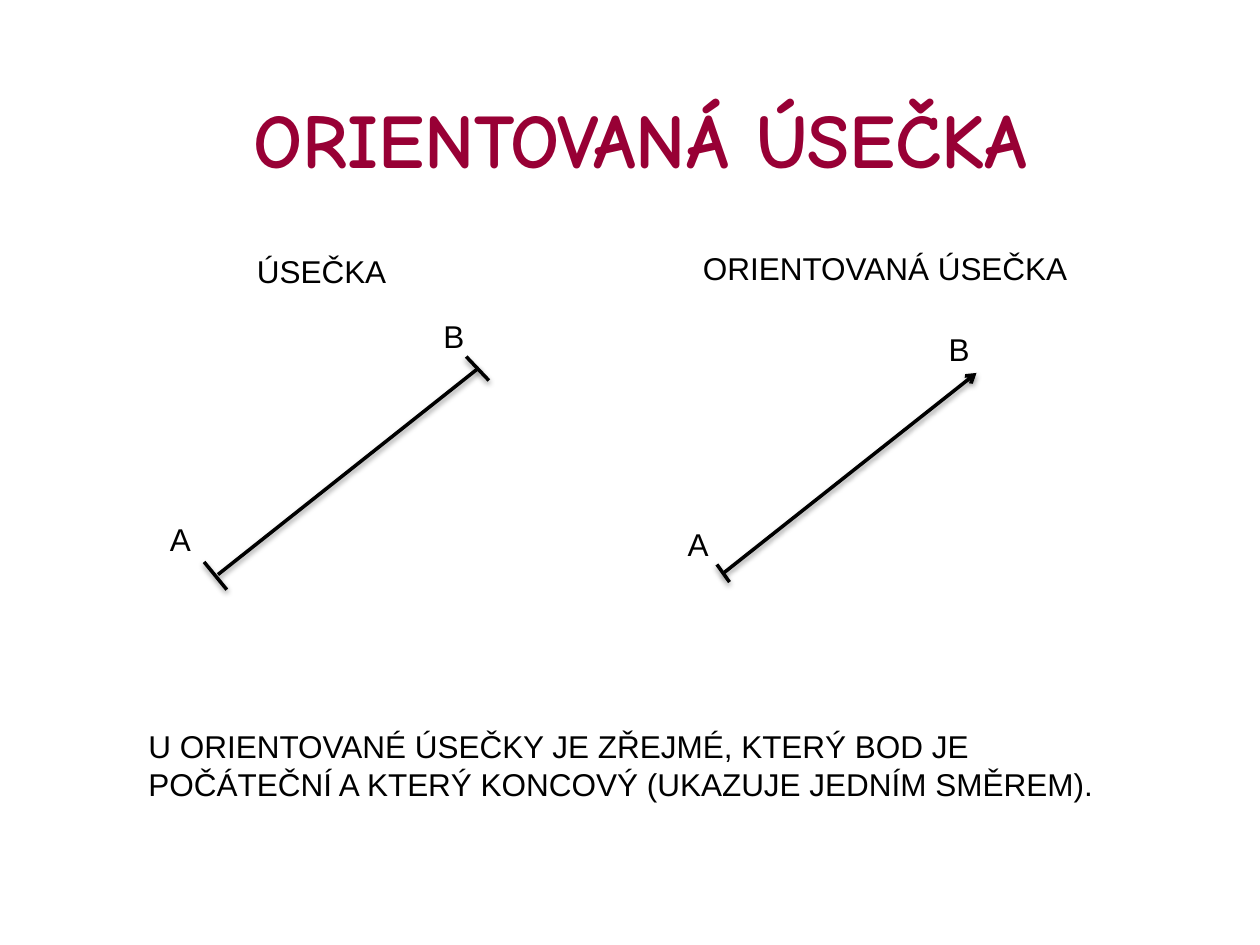
import pptx
import pptx.util
import pptx.dml.color
import pptx.enum.shapes
import pptx.enum.text
import pptx.oxml
import pptx.oxml.ns

Inches = pptx.util.Inches
RGBColor = pptx.dml.color.RGBColor
PP_ALIGN = pptx.enum.text.PP_ALIGN
MSO_ANCHOR = pptx.enum.text.MSO_ANCHOR

CRIMSON = RGBColor(0x98, 0x00, 0x35)
BLACK = RGBColor(0, 0, 0)

SHADOW = (
    f'<a:effectLst {pptx.oxml.ns.nsdecls("a")}>'
    '<a:outerShdw blurRad="40000" dist="20000" dir="5400000" rotWithShape="0">'
    '<a:srgbClr val="000000"><a:alpha val="38000"/></a:srgbClr>'
    '</a:outerShdw></a:effectLst>'
)
ARROW = f'<a:tailEnd {pptx.oxml.ns.nsdecls("a")} type="arrow"/>'


def write(tf, text, *, font="Arial", size=18, color=BLACK, bold=False,
          align=PP_ALIGN.LEFT, anchor=MSO_ANCHOR.TOP, wrap=False):
    """Fill a text frame, one paragraph for each line of text."""
    tf.word_wrap = wrap
    tf.vertical_anchor = anchor
    for i, line in enumerate(text.split("\n")):
        p = tf.paragraphs[0] if i == 0 else tf.add_paragraph()
        p.alignment = align
        r = p.add_run()
        r.text = line
        r.font.name = font
        r.font.size = pptx.util.Pt(size)
        r.font.bold = bold
        r.font.color.rgb = color


def add_text(shapes, text, left, top, width, height=0.4):
    s = shapes.add_textbox(Inches(left), Inches(top), Inches(width), Inches(height))
    write(s.text_frame, text)
    s.text_frame.auto_size = pptx.enum.text.MSO_AUTO_SIZE.SHAPE_TO_FIT_TEXT


def add_line(shapes, start, end, arrow=False):
    points = [Inches(v) for v in (*start, *end)]
    s = shapes.add_connector(pptx.enum.shapes.MSO_CONNECTOR.STRAIGHT, *points)
    s.line.color.rgb = BLACK
    s.line.width = pptx.util.Pt(2)
    if arrow:
        s.line._get_or_add_ln().append(pptx.oxml.parse_xml(ARROW))
    s._element.spPr.append(pptx.oxml.parse_xml(SHADOW))


def add_title(slide, left, top, width, height):
    s = slide.shapes.title
    s.left, s.top, s.width, s.height = map(Inches, (left, top, width, height))
    write(s.text_frame, "ORIENTOVANÁ ÚSEČKA", font="Comic Neue", size=44,
          color=CRIMSON, bold=True, align=PP_ALIGN.CENTER,
          anchor=MSO_ANCHOR.MIDDLE, wrap=True)
    s.text_frame.auto_size = pptx.enum.text.MSO_AUTO_SIZE.NONE


def add_segment(slide, left, top, width, height, *, ticks, labels, arrow=False):
    """Draw A (bottom left) to B (top right); offsets are from the box corner."""
    shapes = slide.shapes.add_group_shape().shapes
    add_line(shapes, (left, top + height), (left + width, top), arrow)
    for x1, y1, x2, y2 in ticks:
        add_line(shapes, (left + x1, top + y1), (left + x2, top + y2))
    for name, (x, y) in zip("AB", labels):
        add_text(shapes, name, left + x, top + y, 0.37)


def main():
    prs = pptx.Presentation()
    prs.slide_width, prs.slide_height = Inches(10), Inches(7.5)
    slide = prs.slides.add_slide(prs.slide_layouts.get_by_name("Title Only"))

    add_title(slide, 0.75, 0.47, 8.67, 1.25)

    # Column headings
    add_text(slide.shapes, "ÚSEČKA", 1.94, 1.95, 1.24)
    add_text(slide.shapes, "ORIENTOVANÁ ÚSEČKA", 5.48, 1.93, 3.12)

    # Plain segment, with a tick at each end
    add_segment(slide, 1.73, 2.92, 2.07, 1.64,
                ticks=[(-0.11, 1.54, 0.07, 1.76), (1.97, -0.09, 2.15, 0.1)],
                labels=[(-0.48, 1.16), (1.69, -0.45)])

    # Oriented segment, with a tick at A and an arrowhead at B
    add_segment(slide, 5.74, 2.96, 2.01, 1.59,
                ticks=[(-0.05, 1.52, 0.05, 1.66)],
                labels=[(-0.38, 1.16), (1.69, -0.39)], arrow=True)

    # Conclusion
    add_text(slide.shapes,
             "U ORIENTOVANÉ ÚSEČKY JE ZŘEJMÉ, KTERÝ BOD JE\n"
             "POČÁTEČNÍ A KTERÝ KONCOVÝ (UKAZUJE JEDNÍM SMĚREM).",
             1.08, 5.72, 7.9, 0.71)

    prs.save("out.pptx")


if __name__ == "__main__":
    main()
